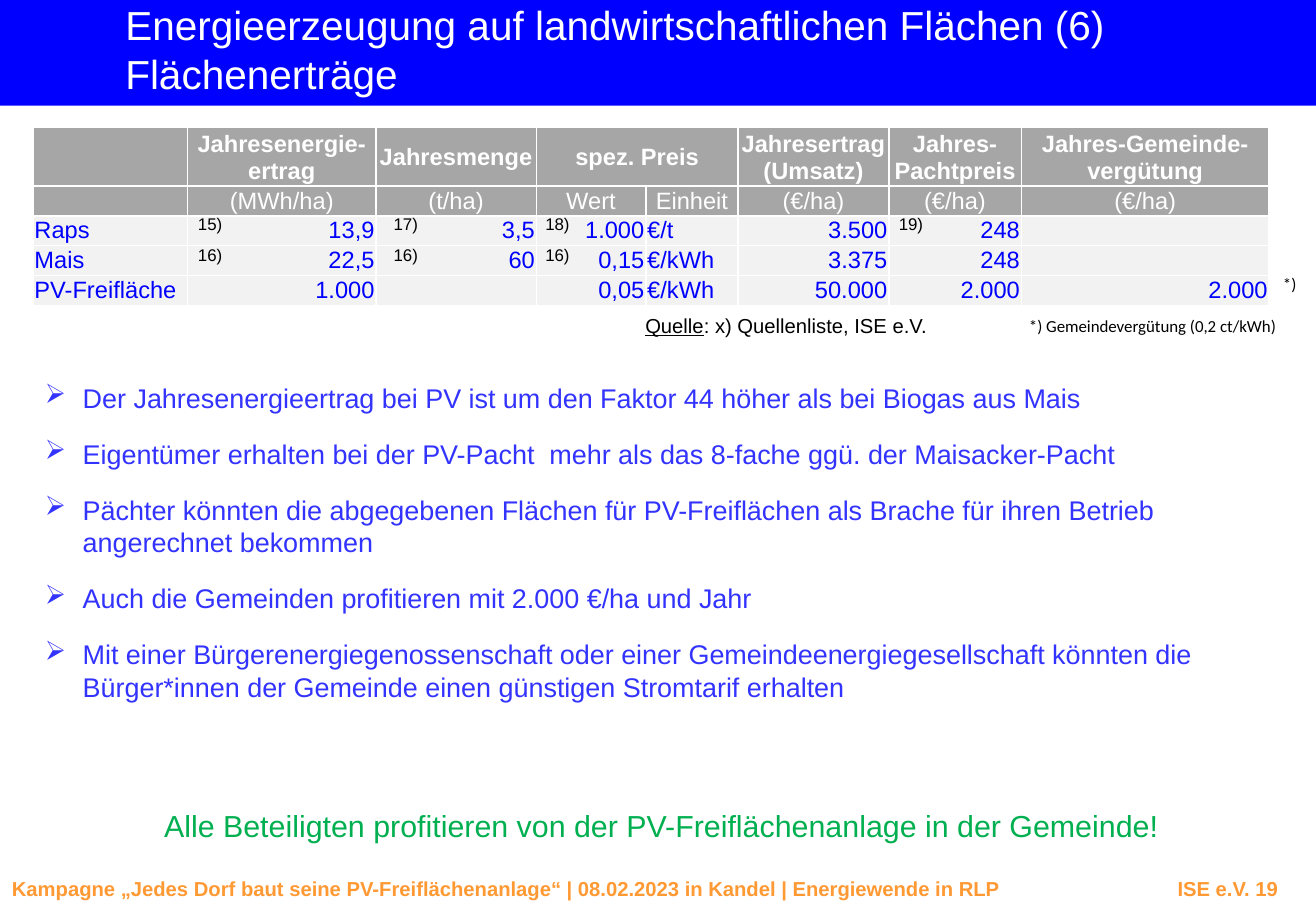
from dataclasses import dataclass
from typing import Optional

from lxml import etree
from pptx import Presentation
from pptx.dml.color import RGBColor
from pptx.enum import shapes, text
from pptx.oxml.ns import qn
from pptx.slide import Slide
from pptx.table import _Cell as Cell
from pptx.text.text import TextFrame, _Paragraph as Paragraph
from pptx.util import Cm, Pt

LEFT, CENTER, RIGHT = text.PP_ALIGN.LEFT, text.PP_ALIGN.CENTER, text.PP_ALIGN.RIGHT
MIDDLE, TOP = text.MSO_ANCHOR.MIDDLE, text.MSO_ANCHOR.TOP


@dataclass(frozen=True)
class Style:
    size: float
    color: str
    bold: bool = False
    name: str = "Arial"


@dataclass(frozen=True)
class Theme:
    banner: str = "0000FF"
    header_fill: str = "A6A6A6"
    body_fill: str = "F2F2F2"
    grid: str = "FFFFFF"
    title: Style = Style(24, "FFFFFF")
    footer: Style = Style(12, "FF9933", bold=True)
    header: Style = Style(14, "FFFFFF", bold=True)
    unit: Style = Style(14, "FFFFFF")
    value: Style = Style(14, "0000FF")
    source: Style = Style(12, "000000")
    mark: Style = Style(10, "000000")
    remark: Style = Style(10, "000000", name="Calibri")
    point: Style = Style(16, "3333FF")
    summary: Style = Style(18, "00B050")


@dataclass(frozen=True)
class Label:
    words: str
    left: float
    top: float
    width: float
    height: float
    style: Style
    inset: Optional[float] = None
    align: text.PP_ALIGN = LEFT


THEME = Theme()
PAGE_WIDTH, PAGE_HEIGHT = 27.51, 19.05

COLUMN_WIDTHS = (3.23, 3.94, 3.35, 2.29, 1.93, 3.15, 2.77, 5.18)
ROW_HEIGHTS = (1.22, 0.61, 0.61, 0.61, 0.61)
YIELDS = (
    ("", "Jahresenergie-ertrag", "Jahresmenge", "spez. Preis", "",
     "Jahresertrag (Umsatz)", "Jahres-Pachtpreis", "Jahres-Gemeinde-vergütung"),
    ("", "(MWh/ha)", "(t/ha)", "Wert", "Einheit", "(€/ha)", "(€/ha)", "(€/ha)"),
    ("Raps", "13,9", "3,5", "1.000", "€/t", "3.500", "248", ""),
    ("Mais", "22,5", "60", "0,15", "€/kWh", "3.375", "248", ""),
    ("PV-Freifläche", "1.000", "", "0,05", "€/kWh", "50.000", "2.000", "2.000"),
)
PRICE_COLUMN, UNIT_COLUMN = 3, 4

MARK_LEFTS = (3.89, 7.98, 11.15, 18.54)
MARKS = ((4.34, ("15)", "17)", "18)", "19)")), (5.0, ("16)", "16)", "16)")))

POINTS = (
    "Der Jahresenergieertrag bei PV ist um den Faktor 44 höher als bei Biogas aus Mais",
    "Eigentümer erhalten bei der PV-Pacht  mehr als das 8-fache ggü. der Maisacker-Pacht",
    "Pächter könnten die abgegebenen Flächen für PV-Freiflächen als Brache für ihren "
    "Betrieb angerechnet bekommen",
    "Auch die Gemeinden profitieren mit 2.000 €/ha und Jahr",
    "Mit einer Bürgerenergiegenossenschaft oder einer Gemeindeenergiegesellschaft könnten "
    "die Bürger*innen der Gemeinde einen günstigen Stromtarif erhalten",
)

TITLE = Label("Energieerzeugung auf landwirtschaftlichen Flächen (6)\vFlächenerträge",
              2.62, 0, 21, 2.06, THEME.title, inset=0)
FOOTER = Label("Kampagne „Jedes Dorf baut seine PV-Freiflächenanlage“ | 08.02.2023 in Kandel "
               "| Energiewende in RLP\tISE e.V. 19", 0, 18.19, PAGE_WIDTH, 0.76, THEME.footer)
SOURCE = Label("", 13.49, 6.55, 6.3, 0.51, THEME.source, inset=0)
NOTES = (
    Label("*) Gemeindevergütung (0,2 ct/kWh)", 21.26, 6.48, 5.9, 0.69, THEME.remark),
    Label("*)", 26.57, 5.59, 0.79, 0.69, THEME.remark),
    Label(" Alle Beteiligten profitieren von der PV-Freiflächenanlage in der Gemeinde!",
          0, 16.69, PAGE_WIDTH, 1.12, THEME.summary, inset=0.18, align=CENTER),
)
POINT_BOX = Label("", 0.69, 7.85, 26.67, 7, THEME.point)


def apply_style(para: Paragraph, style: Style) -> None:
    para.font.name = style.name
    para.font.size = Pt(style.size)
    para.font.bold = style.bold
    para.font.color.rgb = RGBColor.from_string(style.color)


def add_label(page: Slide, label: Label) -> TextFrame:
    box = page.shapes.add_textbox(
        Cm(label.left), Cm(label.top), Cm(label.width), Cm(label.height))
    frame = box.text_frame
    frame.word_wrap = True
    frame.auto_size = text.MSO_AUTO_SIZE.SHAPE_TO_FIT_TEXT
    if label.inset is not None:
        frame.margin_left = frame.margin_right = Cm(label.inset)
        frame.margin_top = frame.margin_bottom = Cm(label.inset)
    para = frame.paragraphs[0]
    if label.words:
        para.text = label.words
    para.alignment = label.align
    apply_style(para, label.style)
    return frame


def add_banner(page: Slide) -> None:
    banner = page.shapes.add_shape(
        shapes.MSO_SHAPE.RECTANGLE, 0, 0, Cm(PAGE_WIDTH), Cm(2.21))
    banner.shadow.inherit = False
    banner.fill.solid()
    banner.fill.fore_color.rgb = RGBColor.from_string(THEME.banner)
    banner.line.fill.background()


def add_footer(page: Slide) -> None:
    para = add_label(page, FOOTER).paragraphs[0]
    tabs = etree.Element(qn("a:tabLst"))
    etree.SubElement(tabs, qn("a:tab"), pos=str(Cm(26.47)), algn="r")
    para._p.get_or_add_pPr().insert(0, tabs)


def add_source(page: Slide) -> None:
    para = add_label(page, SOURCE).paragraphs[0]
    for words, underlined in (("Quelle", True), (": x) Quellenliste, ISE e.V.", False)):
        span = para.add_run()
        span.text = words
        span.font.underline = underlined


def add_points(page: Slide) -> None:
    frame = add_label(page, POINT_BOX)
    for index, words in enumerate(POINTS):
        para = frame.add_paragraph() if index else frame.paragraphs[0]
        para.text = words
        if index:
            para.space_before = Pt(14)
        properties = para._p.get_or_add_pPr()
        properties.set("marL", str(Cm(0.79)))
        properties.set("indent", str(-Cm(0.79)))
        for old in properties.findall(qn("a:defRPr")):
            properties.remove(old)
        etree.SubElement(properties, qn("a:buChar"), char="➢")
        apply_style(para, THEME.point)


def format_cell(cell: Cell, fill: str) -> None:
    """Give a cell its margins, thin grid lines and fill."""
    cell.margin_left = cell.margin_right = cell.margin_top = Cm(0.03)
    cell.margin_bottom = 0
    properties = cell._tc.get_or_add_tcPr()
    for side in ("lnL", "lnR", "lnT", "lnB"):
        line = etree.SubElement(properties, qn(f"a:{side}"), w=str(Pt(1)))
        solid = etree.SubElement(line, qn("a:solidFill"))
        etree.SubElement(solid, qn("a:srgbClr"), val=THEME.grid)
    cell.fill.solid()
    cell.fill.fore_color.rgb = RGBColor.from_string(fill)


def add_yield_table(page: Slide) -> None:
    table = page.shapes.add_table(
        len(ROW_HEIGHTS), len(COLUMN_WIDTHS), Cm(0.69), Cm(2.67),
        Cm(sum(COLUMN_WIDTHS)), Cm(sum(ROW_HEIGHTS))).table
    table.first_row = table.horz_banding = False
    for column, width in zip(table.columns, COLUMN_WIDTHS):
        column.width = Cm(width)
    for r, (height, entries) in enumerate(zip(ROW_HEIGHTS, YIELDS)):
        table.rows[r].height = Cm(height)
        heading = r < 2
        style = (THEME.header, THEME.unit)[r] if heading else THEME.value
        for c, words in enumerate(entries):
            cell = table.cell(r, c)
            format_cell(cell, THEME.header_fill if heading else THEME.body_fill)
            cell.vertical_anchor = MIDDLE if heading else TOP
            para = cell.text_frame.paragraphs[0]
            body_align = LEFT if c in (0, UNIT_COLUMN) else RIGHT
            para.alignment = CENTER if heading else body_align
            if words:
                para.text = words
            apply_style(para, style)
            if not words:
                etree.SubElement(para._p, qn("a:endParaRPr"), sz=str(style.size * 100))
    table.cell(0, PRICE_COLUMN).merge(table.cell(0, UNIT_COLUMN))


def main() -> None:
    deck = Presentation()
    deck.slide_width, deck.slide_height = Cm(PAGE_WIDTH), Cm(PAGE_HEIGHT)
    page = deck.slides.add_slide(deck.slide_layouts[6])
    add_banner(page)
    add_footer(page)
    add_label(page, TITLE)
    add_source(page)
    add_points(page)
    add_yield_table(page)
    for note in NOTES:
        add_label(page, note)
    for top, marks in MARKS:
        for left, mark in zip(MARK_LEFTS, marks):
            add_label(page, Label(mark, left, top, 1.17, 0.69, THEME.mark))
    deck.save("out.pptx")


if __name__ == "__main__":
    main()
